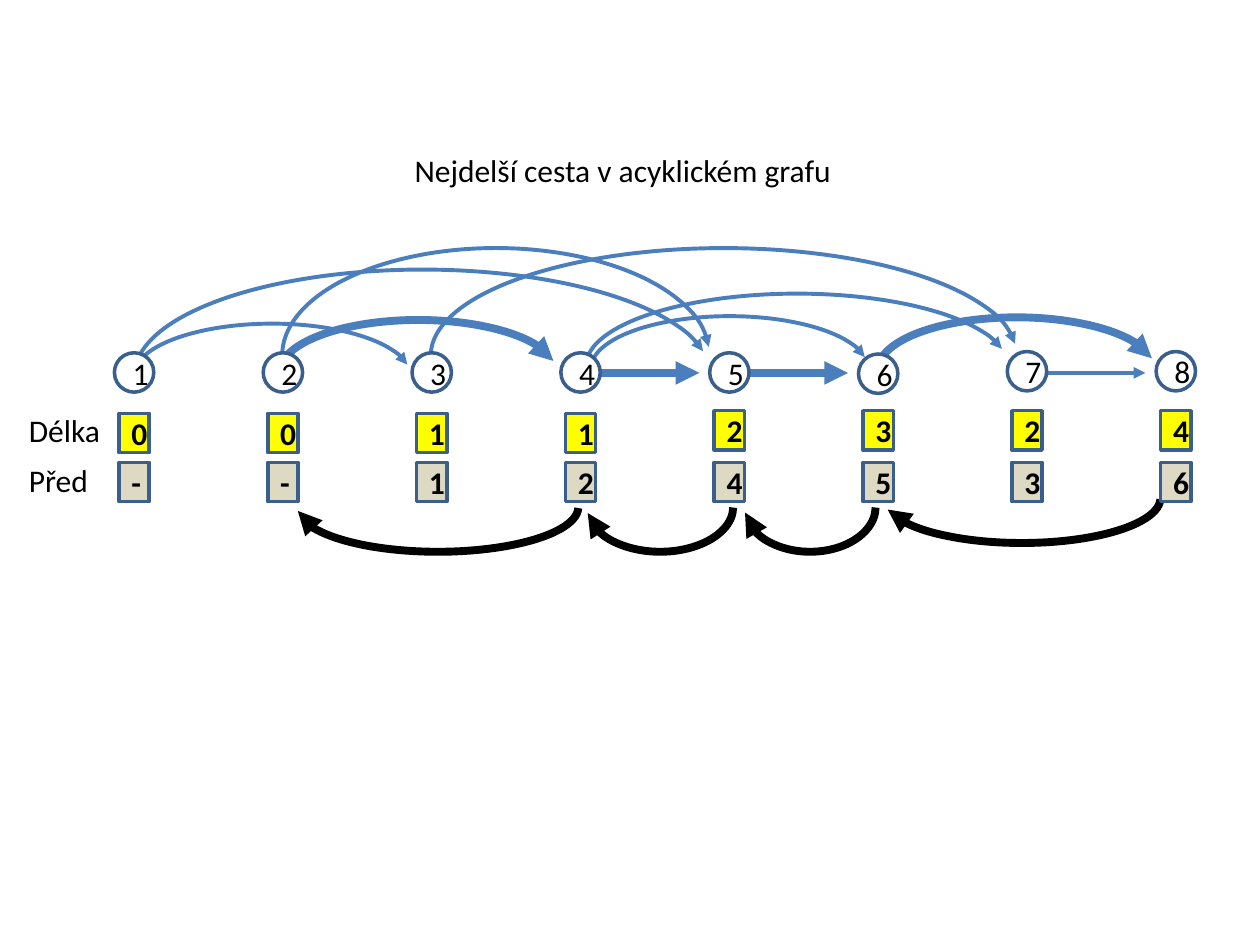
from pptx import Presentation
from pptx.dml.color import RGBColor
from pptx.enum.shapes import MSO_CONNECTOR as Link, MSO_SHAPE as Form
from pptx.enum.text import MSO_ANCHOR as Anchor, MSO_AUTO_SIZE as Fit, PP_ALIGN as Align
from pptx.oxml.ns import qn
from pptx.util import Pt
from lxml.etree import SubElement as Sub

STEP = 85.04
THIN, THICK = 2.25, 4.5
ARCS = [
    (76.3, 185, 158.4, 59.8, THIN, 213.11),
    (77, 154.1, 329, 120.2, THIN, 213.11),
    (161.3, 141.8, 244.1, 122.4, THIN, 214.65),
    (501.8, 181.4, 158.4, 59.8, THICK, 213.11),
    (337.7, 180.7, 158.4, 59.8, THIN, 213.11),
    (246.2, 141.8, 334.8, 122.4, THIN, 214.65),
    (334.8, 167.8, 241.2, 82.8, THIN, 213.11),
    (159.8, 182.9, 158.4, 59.8, THICK, 213.11),
]
BACKS = [
    (504.7, 259.2, 158.4, 213.11),
    (425.5, 264.2, 74.9, 213.11),
    (335.5, 264.2, 83.5, 213.11),
    (169.9, 264.2, 160.6, 215.04),
]
LINES = [(342.7, 399.6, THICK), (427.7, 484.6, THICK), (598.3, 654.5, THIN)]
TOPS = [201.6] * 5 + [202.3] + [200.9] * 2


def tint(code):
    return RGBColor.from_string(code)


class Graph:
    """Draws the parts of a graph on one slide in one style."""

    font, size = "Calibri", 18
    ink, edge, rim = "000000", "4B7EBC", "3A5F8C"

    def __init__(self, slide):
        self.slide = slide
        self.shapes = slide.shapes

    def put(self, frame, text, align, bold=False):
        para = frame.paragraphs[0]
        para.alignment = align
        run = para.add_run()
        run.text = text
        font = run.font
        font.name, font.size, font.bold = self.font, Pt(self.size), bold
        font.color.rgb = tint(self.ink)

    def stroke(self, item, width, color):
        item.line.width = Pt(width)
        item.line.color.rgb = tint(color)

    def tip(self, item):
        Sub(item.element.spPr.find(qn("a:ln")), qn("a:tailEnd"), type="triangle")

    def label(self, box, text):
        frame = box.text_frame
        frame.word_wrap = False
        frame.auto_size = Fit.SHAPE_TO_FIT_TEXT
        frame.vertical_anchor = Anchor.TOP
        self.put(frame, text, Align.LEFT)

    def title(self, x, y, w, h, text):
        box = self.shapes.title
        box.left, box.top, box.width, box.height = Pt(x), Pt(y), Pt(w), Pt(h)
        self.label(box, text)

    def note(self, x, y, w, h, text):
        self.label(self.shapes.add_textbox(Pt(x), Pt(y), Pt(w), Pt(h)), text)

    def shape(self, form, x, y, w, h, width, color):
        item = self.shapes.add_shape(form, Pt(x), Pt(y), Pt(w), Pt(h))
        item.shadow.inherit = False
        self.stroke(item, width, color)
        return item

    def cell(self, form, x, y, w, fill, text, bold=True):
        item = self.shape(form, x, y, w, 22.5, 2, self.rim)
        item.fill.solid()
        item.fill.fore_color.rgb = tint(fill)
        item.text_frame.vertical_anchor = Anchor.MIDDLE
        self.put(item.text_frame, text, Align.CENTER, bold)

    def arc(self, x, y, w, h, width, end, back=False):
        item = self.shape(Form.ARC, x, y, w, h, width, self.ink if back else self.edge)
        item.fill.background()
        item.adjustments[0], item.adjustments[1] = 108.25, end
        self.tip(item)
        if back:
            for key in ("flipH", "flipV"):
                item.element.spPr.xfrm.set(key, "1")

    def arrow(self, start, end, y, width):
        item = self.shapes.add_connector(Link.STRAIGHT, Pt(start), Pt(y), Pt(end), Pt(y))
        self.stroke(item, width, self.edge)
        self.tip(item)
        Sub(item.element.spPr, qn("a:effectLst"))


def main():
    deck = Presentation()
    deck.slide_width, deck.slide_height = Pt(720), Pt(540)
    graph = Graph(deck.slides.add_slide(deck.slide_layouts[5]))
    graph.title(229.7, 82.8, 254.9, 29, "Nejdelší cesta v acyklickém grafu")
    for arc in ARCS:
        graph.arc(*arc)
    for start, end, width in LINES:
        graph.arrow(start, end, 213.1, width)
    for i, top in enumerate(TOPS):
        graph.cell(Form.OVAL, 65.4 + i * STEP, top, 22.5, "FFFFFF", str(i + 1), False)
    for x, y, w, end in BACKS:
        graph.arc(x, y, w, 51.1, THICK, end, True)
    for i, (cost, prev) in enumerate(zip("00112324", "--124536")):
        x = 68 + i * STEP
        graph.cell(Form.RECTANGLE, x, 236.2 if i < 4 else 234.7, 17.3, "FFFF00", cost)
        graph.cell(Form.RECTANGLE, x, 264.2, 17.3, "DDD9C3", prev)
    graph.note(9.4, 259.9, 49, 29, "Před")
    graph.note(9.4, 231.1, 55.4, 29, "Délka")
    deck.save("out.pptx")


if __name__ == "__main__":
    main()
